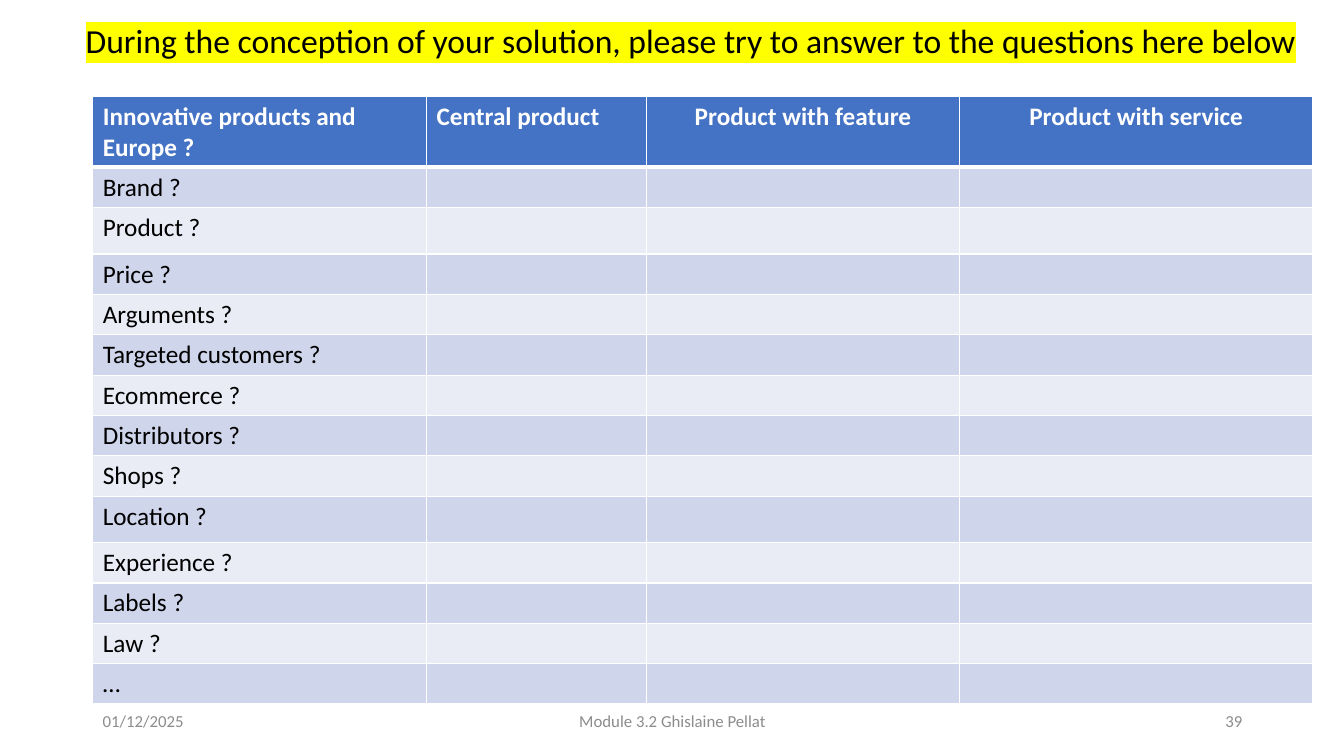
from dataclasses import dataclass

from lxml import etree
from pptx import Presentation
from pptx.dml.color import RGBColor
from pptx.enum.text import MSO_ANCHOR, MSO_AUTO_SIZE, PP_ALIGN
from pptx.oxml.ns import qn
from pptx.util import Inches, Pt

LEFT, CENTER, RIGHT = PP_ALIGN.LEFT, PP_ALIGN.CENTER, PP_ALIGN.RIGHT
TOP, MIDDLE = MSO_ANCHOR.TOP, MSO_ANCHOR.MIDDLE
FIT_SHAPE = MSO_AUTO_SIZE.SHAPE_TO_FIT_TEXT
TITLE_ONLY = 5


@dataclass(frozen=True)
class Theme:
    font: str = "Calibri"
    title_size: int = 24
    table_size: int = 18
    footer_size: int = 12
    ink: str = "000000"
    paper: str = "FFFFFF"
    muted: str = "8C8C8C"
    marker: str = "FFFF00"
    header: str = "4472C4"
    bands: tuple = ("CFD5EA", "E9EBF5")


THEME = Theme()
SLIDE_SIZE = (13.33, 7.5)
MARGIN = 0.92

# Table content and grid, in inches
HEADINGS = [
    ("Innovative products and Europe ?", LEFT),
    ("Central product", LEFT),
    ("Product with feature", CENTER),
    ("Product with service", CENTER),
]
QUESTIONS = ["Brand ?", "Product ?", "Price ?", "Arguments ?",
             "Targeted customers ?", "Ecommerce ?", "Distributors ?",
             "Shops ?", "Location ?", "Experience ?", "Labels ?", "Law ?", "…"]
COLUMN_WIDTHS = [3.31, 2.18, 3.11, 3.5]
HEADER_HEIGHT, ROW_HEIGHT, TALL_ROW_HEIGHT = 0.7, 0.4, 0.46
TALL_QUESTIONS = {"Product ?", "Location ?"}

# Footer: text, left, width, alignment
FOOTER = [
    ("01/12/2025", MARGIN, 3, LEFT),
    ("Module 3.2 Ghislaine Pellat", 4.42, 4.5, CENTER),
    ("39", 9.42, 3, RIGHT),
]


def write(frame, text, size, color, align=LEFT, bold=False):
    paragraph = frame.paragraphs[0]
    run = paragraph.add_run()
    run.text = text
    paragraph.alignment = align
    font = paragraph.font
    font.name, font.size, font.bold = THEME.font, Pt(size), bold
    font.color.rgb = RGBColor.from_string(color)
    return run


def highlight(run, color):
    properties = run.font._element
    marker = etree.SubElement(properties, qn("a:highlight"))
    etree.SubElement(marker, qn("a:srgbClr"), val=color)


def style_cell(cell, fill, bottom_width=1):
    properties = cell._tc.get_or_add_tcPr()
    for side, width in (("L", 1), ("R", 1), ("T", 1), ("B", bottom_width)):
        line = etree.SubElement(properties, qn(f"a:ln{side}"), w=str(Pt(width)))
        solid = etree.SubElement(line, qn("a:solidFill"))
        etree.SubElement(solid, qn("a:srgbClr"), val=THEME.paper)
    cell.fill.solid()
    cell.fill.fore_color.rgb = RGBColor.from_string(fill)


def add_title(slide, text):
    title = slide.shapes.title
    title.left, title.top = Inches(0.75), Inches(0.15)
    title.width, title.height = Inches(12.26), Inches(0.5)
    frame = title.text_frame
    frame.word_wrap = True
    frame.auto_size = FIT_SHAPE
    frame.vertical_anchor = TOP
    highlight(write(frame, text, THEME.title_size, THEME.ink), THEME.marker)


def add_question_table(slide):
    heights = [HEADER_HEIGHT] + [
        TALL_ROW_HEIGHT if question in TALL_QUESTIONS else ROW_HEIGHT
        for question in QUESTIONS]
    table = slide.shapes.add_table(
        len(heights), len(COLUMN_WIDTHS), Inches(MARGIN), Inches(0.96),
        Inches(sum(COLUMN_WIDTHS)), Inches(sum(heights))).table
    for column, width in zip(table.columns, COLUMN_WIDTHS):
        column.width = Inches(width)
    for row, height in zip(table.rows, heights):
        row.height = Inches(height)

    # Header row
    for cell, (heading, align) in zip(table.rows[0].cells, HEADINGS):
        style_cell(cell, THEME.header, bottom_width=3)
        write(cell.text_frame, heading, THEME.table_size, THEME.paper, align, True)

    # Banded question rows, with empty answer cells
    for index, question in enumerate(QUESTIONS):
        cells = table.rows[index + 1].cells
        for cell in cells:
            style_cell(cell, THEME.bands[index % 2])
        write(cells[0].text_frame, question, THEME.table_size, THEME.ink)


def add_footer_text(slide, text, left, width, align):
    box = slide.shapes.add_textbox(
        Inches(left), Inches(6.95), Inches(width), Inches(0.4))
    frame = box.text_frame
    frame.word_wrap = True
    frame.vertical_anchor = MIDDLE
    write(frame, text, THEME.footer_size, THEME.muted, align)


def main():
    deck = Presentation()
    deck.slide_width, deck.slide_height = map(Inches, SLIDE_SIZE)
    slide = deck.slides.add_slide(deck.slide_layouts[TITLE_ONLY])
    add_title(slide, "During the conception of your solution, please try to "
                     "answer to the questions here below")
    add_question_table(slide)
    for item in FOOTER:
        add_footer_text(slide, *item)
    deck.save("out.pptx")


if __name__ == "__main__":
    main()
